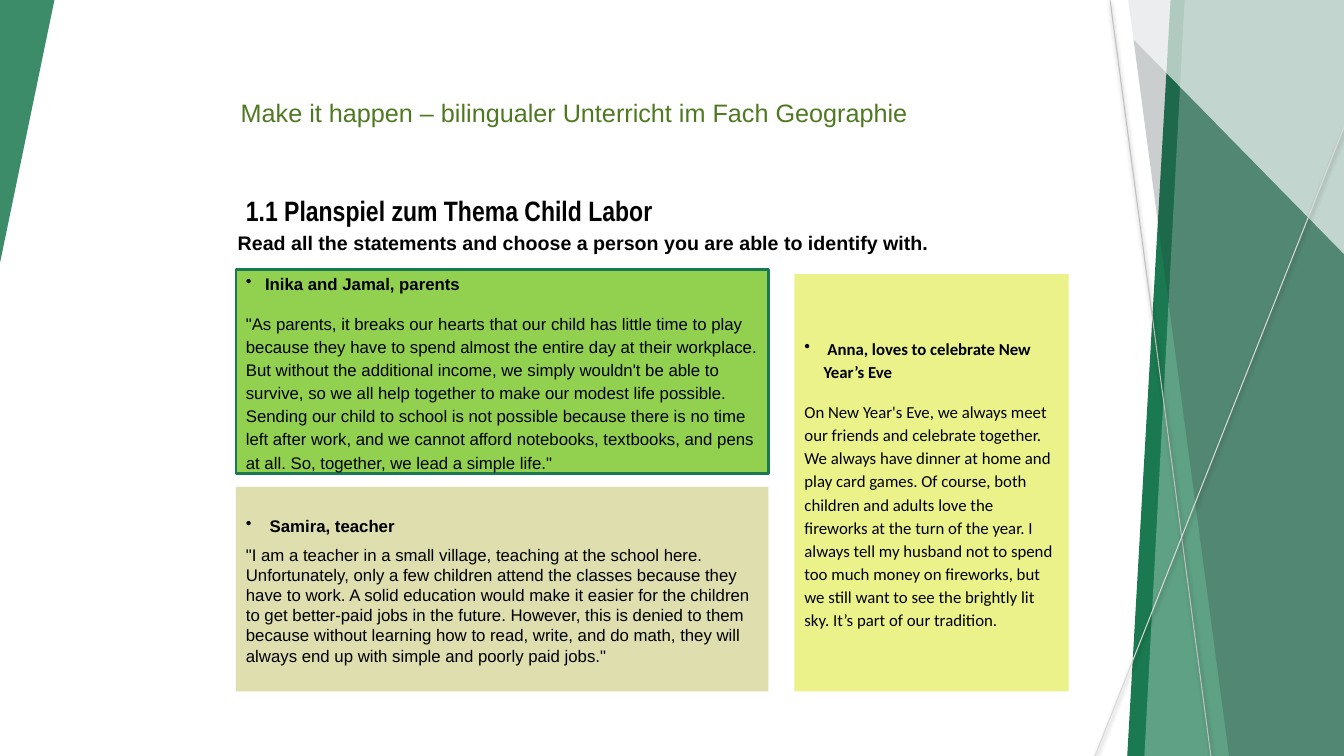
from pptx import Presentation
from pptx.dml.color import RGBColor
from pptx.enum.shapes import MSO_CONNECTOR, MSO_SHAPE
from pptx.enum.text import MSO_ANCHOR, MSO_AUTO_SIZE, PP_ALIGN
from pptx.oxml import parse_xml
from pptx.oxml.ns import nsdecls, qn
from pptx.oxml.xmlchemy import OxmlElement
from pptx.util import Emu, Pt

PX = 9144  # 100 px to the inch
COLORS = {
    "black": "000000", "white": "FFFFFF", "green": "1A7950", "slate": "2C3C43",
    "title": "4F7921", "lime": "92D050", "sand": "DEDEAE", "yellow": "EBF28A",
    "grey": "BFBFBF", "light": "D9D9D9",
}
BODY_GAP = 6


def px(n):
    return Emu(n * PX)


def color(name):
    return RGBColor.from_string(COLORS[name])


def add_polygon(s, points, fill, opacity=100):
    builder = s.shapes.build_freeform(*points[0], scale=PX)
    builder.add_line_segments(points[1:], close=True)
    sp = builder.convert_to_shape()
    sp.shadow.inherit = False
    sp.fill.solid()
    sp.fill.fore_color.rgb = color(fill)
    sp.line.fill.background()
    if opacity < 100:
        alpha = OxmlElement("a:alpha")
        alpha.set("val", str(opacity * 1000))
        next(sp.element.spPr.iter(qn("a:srgbClr"))).append(alpha)


def add_shadow_line(s, x1, y1, x2, y2, line_color):
    line = s.shapes.add_connector(
        MSO_CONNECTOR.STRAIGHT, px(x1), px(y1), px(x2), px(y2))
    line.line.color.rgb = color(line_color)
    line.line.width = Pt(0.75)
    line.element.spPr.append(parse_xml(
        f'<a:effectLst {nsdecls("a")}>'
        f'<a:outerShdw blurRad="{Pt(3.1)}" dist="{Pt(1.6)}" dir="5400000">'
        '<a:srgbClr val="000000"><a:alpha val="38000"/></a:srgbClr>'
        '</a:outerShdw></a:effectLst>'))


def add_run(p, text, size, font, bold=False, font_color="black"):
    r = p.add_run()
    r.text = text
    r.font.size = Pt(size)
    r.font.name = font
    r.font.bold = bold
    r.font.color.rgb = color(font_color)


def add_bullet(p):
    pPr = p._p.get_or_add_pPr()
    pPr.set("marL", str(px(19)))
    pPr.set("indent", str(px(-19)))
    bullet = OxmlElement("a:buChar")
    bullet.set("char", "•")
    pPr.append(bullet)


def set_title(s, text, x, y, w, h):
    title = s.shapes.title
    title.left, title.top, title.width, title.height = map(px, (x, y, w, h))
    tf = title.text_frame
    tf.word_wrap = True
    tf.auto_size = MSO_AUTO_SIZE.SHAPE_TO_FIT_TEXT
    tf.vertical_anchor = MSO_ANCHOR.TOP
    tf.margin_left = tf.margin_right = tf.margin_top = tf.margin_bottom = px(5)
    p = tf.paragraphs[0]
    p.alignment = PP_ALIGN.CENTER
    add_run(p, text, 18, "Arial", font_color="title")


def add_heading(s, text, x, y, w, h, size, font, spacing=1.0):
    tf = s.shapes.add_textbox(*map(px, (x, y, w, h))).text_frame
    tf.word_wrap = True
    tf.auto_size = MSO_AUTO_SIZE.SHAPE_TO_FIT_TEXT
    p = tf.paragraphs[0]
    p.line_spacing = spacing
    add_run(p, text, size, font, bold=True)


def add_statement(s, person, quote, x, y, w, h, fill, font="Arial",
                  outline=None, loose=True):
    sp = s.shapes.add_shape(MSO_SHAPE.RECTANGLE, *map(px, (x, y, w, h)))
    sp.shadow.inherit = False
    sp.fill.solid()
    sp.fill.fore_color.rgb = color(fill)
    if outline:
        sp.line.color.rgb = color(outline)
        sp.line.width = Pt(2)
    else:
        sp.line.fill.background()
    tf = sp.text_frame
    tf.word_wrap = True
    tf.vertical_anchor = MSO_ANCHOR.MIDDLE

    p = tf.paragraphs[0]
    p.alignment = PP_ALIGN.LEFT
    p.line_spacing = 1.15
    p.space_after = Pt(BODY_GAP)
    add_bullet(p)
    add_run(p, person, 12, font, bold=True)

    p = tf.add_paragraph()
    p.alignment = PP_ALIGN.LEFT
    if loose:
        p.line_spacing = 1.15
        p.space_before = p.space_after = Pt(BODY_GAP)
    add_run(p, quote, 12, font)


def main():
    prs = Presentation()
    prs.slide_width, prs.slide_height = px(1333), px(750)
    s = prs.slides.add_slide(prs.slide_layouts[5])

    # Facets at the edges
    add_polygon(s, [(1161, 0), (1333, 0), (1333, 750), (1118, 750)], "green")
    add_polygon(s, [(1175, 0), (1333, 0), (1333, 750), (1135, 750)], "white", 30)
    add_polygon(s, [(1119, 0), (1333, 0), (1333, 750), (1219, 750)], "slate", 25)
    add_polygon(s, [(1086, 0), (1333, 0), (1333, 252)], "white", 65)
    add_shadow_line(s, 1101, 0, 1201, 750, "grey")
    add_shadow_line(s, 1333, 126, 1086, 750, "light")
    add_polygon(s, [(0, 0), (54, 0), (0, 261)], "green", 85)

    # Title and headings
    set_title(s, "Make it happen – bilingualer Unterricht im Fach Geographie",
              123, 92, 893, 40)
    add_heading(s, "1.1 Planspiel zum Thema Child Labor",
                234, 170, 500, 54, 20, "Arial Narrow", 1.5)
    add_heading(s, "Read all the statements and choose a person you are able to "
                "identify with.", 226, 224, 826, 47, 14, "Arial")

    # Statements
    add_statement(
        s, "Inika and Jamal, parents",
        "\"As parents, it breaks our hearts that our child has little time to play "
        "because they have to spend almost the entire day at their workplace. But "
        "without the additional income, we simply wouldn't be able to survive, so "
        "we all help together to make our modest life possible. Sending our child "
        "to school is not possible because there is no time left after work, and "
        "we cannot afford notebooks, textbooks, and pens at all. So, together, we "
        "lead a simple life.\"",
        234, 267, 528, 203, "lime", outline="green")
    add_statement(
        s, " Samira, teacher",
        "\"I am a teacher in a small village, teaching at the school here. "
        "Unfortunately, only a few children attend the classes because they have "
        "to work. A solid education would make it easier for the children to get "
        "better-paid jobs in the future. However, this is denied to them because "
        "without learning how to read, write, and do math, they will always end up "
        "with simple and poorly paid jobs.\"",
        234, 483, 528, 203, "sand", loose=False)
    add_statement(
        s, " Anna, loves to celebrate New Year’s Eve",
        "On New Year's Eve, we always meet our friends and celebrate together. We "
        "always have dinner at home and play card games. Of course, both children "
        "and adults love the fireworks at the turn of the year. I always tell my "
        "husband not to spend too much money on fireworks, but we still want to "
        "see the brightly lit sky. It’s part of our tradition.",
        788, 272, 272, 414, "yellow", font="Calibri")

    prs.save("out.pptx")


if __name__ == "__main__":
    main()
